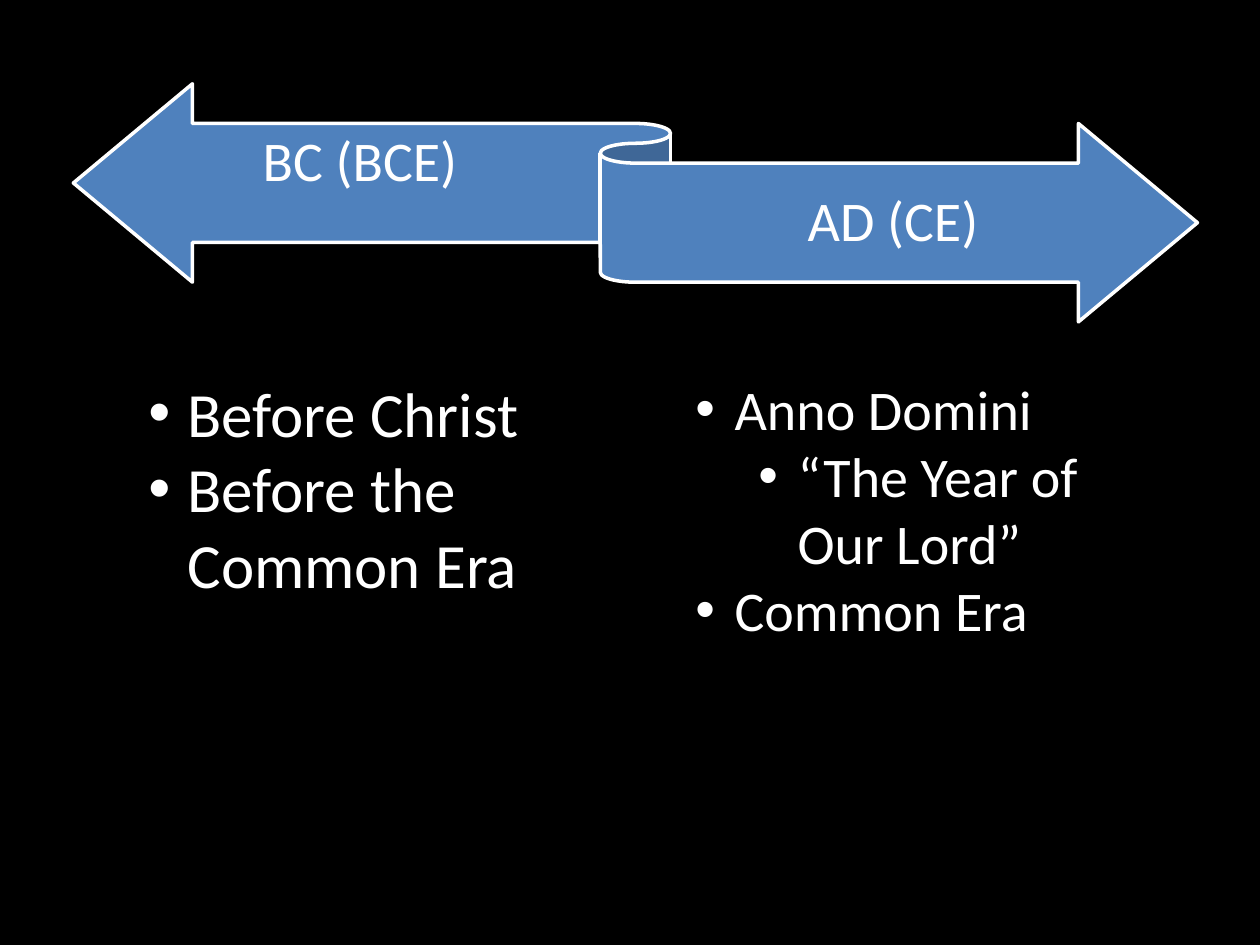
"""Build a slide comparing BC (BCE) with AD (CE)."""
from dataclasses import dataclass

from lxml import etree
from pptx import Presentation
from pptx import util as u
from pptx.dml.color import RGBColor
from pptx.enum import shapes, text
from pptx.oxml.ns import qn

COLOURS = {"background": "000000", "ribbon": "4F81BD", "light": "FFFFFF"}
FONT = "Calibri"
HANGING = u.Cm(0.79)
LEVEL_STEP = u.Cm(1.27)


@dataclass
class Area:
    left: float
    top: float
    width: float
    height: float

    def lengths(self) -> list:
        return [u.Cm(value) for value in (self.left, self.top, self.width, self.height)]


@dataclass
class Era:
    label: str
    label_area: Area
    anchor: text.MSO_ANCHOR
    inset: float
    points: list[tuple[str, int]]
    points_area: Area
    size: int


ERAS = [
    Era("BC (BCE)", Area(5.28, 2.69, 3.96, 2.36), text.MSO_ANCHOR.TOP, 0,
        [("Before Christ", 0), ("Before the Common Era", 0)],
        Area(2.74, 7.42, 9.09, 5.64), 36),
    Era("AD (CE)", Area(15.67, 3.33, 4.67, 2.36), text.MSO_ANCHOR.MIDDLE, 0.32,
        [("Anno Domini", 0), ("“The Year of Our Lord”", 1), ("Common Era", 0)],
        Area(13.77, 7.42, 9.96, 6.5), 32),
]


def colour(name: str) -> RGBColor:
    return RGBColor.from_string(COLOURS[name])


def add_frame(page, area: Area):
    frame = page.shapes.add_textbox(*area.lengths()).text_frame
    frame.word_wrap = True
    return frame


def write(para, words: str, *, size: int) -> None:
    span = para.add_run()
    span.text = words
    span.font.name = FONT
    span.font.size = u.Pt(size)
    span.font.color.rgb = colour("light")


def add_bullet(para, level: int) -> None:
    para.level = level
    properties = para._p.get_or_add_pPr()
    properties.set("marL", str(HANGING + level * LEVEL_STEP))
    properties.set("indent", str(-HANGING))
    etree.SubElement(properties, qn("a:buFont")).set("typeface", "Arial")
    etree.SubElement(properties, qn("a:buChar")).set("char", "•")


def draw_ribbon(page, area: Area) -> None:
    ribbon = page.shapes.add_shape(shapes.MSO_SHAPE.LEFT_RIGHT_RIBBON, *area.lengths())
    ribbon.shadow.inherit = False
    ribbon.fill.solid()
    ribbon.fill.fore_color.rgb = colour("ribbon")
    ribbon.line.color.rgb = colour("light")
    ribbon.line.width = u.Pt(2)


def draw_label(page, era: Era) -> None:
    frame = add_frame(page, era.label_area)
    frame.vertical_anchor = era.anchor
    frame.margin_left = frame.margin_right = 0
    frame.margin_top = frame.margin_bottom = u.Cm(era.inset)
    para = frame.paragraphs[0]
    para.alignment = text.PP_ALIGN.CENTER
    para.line_spacing = 0.9
    write(para, era.label, size=32)


def draw_points(page, era: Era) -> None:
    frame = add_frame(page, era.points_area)
    frame.auto_size = text.MSO_AUTO_SIZE.SHAPE_TO_FIT_TEXT
    for index, (words, level) in enumerate(era.points):
        para = frame.add_paragraph() if index else frame.paragraphs[0]
        add_bullet(para, level)
        write(para, words, size=era.size)


def main() -> None:
    deck = Presentation()
    deck.slide_width, deck.slide_height = u.Cm(25.4), u.Cm(19.05)
    page = deck.slides.add_slide(deck.slide_layouts[6])
    page.background.fill.solid()
    page.background.fill.fore_color.rgb = colour("background")
    draw_ribbon(page, Area(1.48, 1.69, 22.66, 4.8))
    for era in ERAS:
        draw_label(page, era)
        draw_points(page, era)
    deck.save("out.pptx")


if __name__ == "__main__":
    main()
